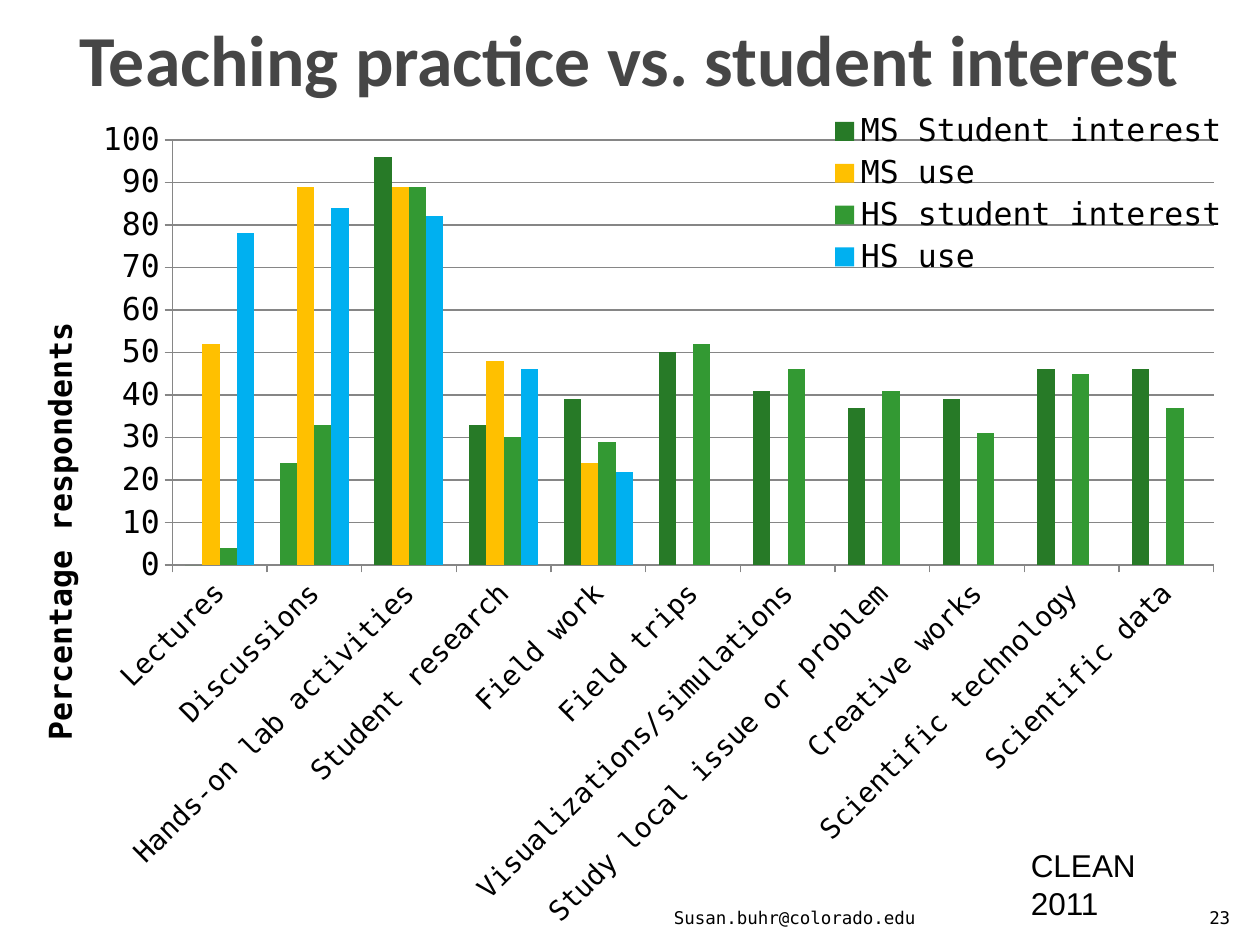
from lxml import etree
from pptx import Presentation
from pptx.chart.data import CategoryChartData
from pptx.dml.color import RGBColor
from pptx.enum.chart import XL_CHART_TYPE as ChartType, XL_LEGEND_POSITION as LegendPos, XL_TICK_MARK as Tick
from pptx.enum.text import MSO_ANCHOR as Anchor, PP_ALIGN as Align
from pptx.oxml.ns import qn
from pptx.util import Cm, Pt

BLACK = RGBColor(0x00, 0x00, 0x00)
TITLE_GREY = RGBColor(0x46, 0x46, 0x46)
GRID_GREY = RGBColor(0x86, 0x86, 0x86)
DARK_GREEN = RGBColor(0x27, 0x7A, 0x27)
GREEN = RGBColor(0x33, 0x99, 0x33)
AMBER = RGBColor(0xFF, 0xC0, 0x00)
BLUE = RGBColor(0x00, 0xB0, 0xF0)
MONO = "DejaVu Sans Mono"

CATEGORIES = [
    "Lectures", "Discussions", "Hands-on lab activities", "Student research",
    "Field work", "Field trips", "Visualizations/simulations",
    "Study local issue or problem", "Creative works", "Scientific technology",
    "Scientific data",
]
UNUSED = [None] * 6
SERIES = [
    ("MS Student interest", DARK_GREEN, [0, 24, 96, 33, 39, 50, 41, 37, 39, 46, 46]),
    ("MS use", AMBER, [52, 89, 89, 48, 24] + UNUSED),
    ("HS student interest", GREEN, [4, 33, 89, 30, 29, 52, 46, 41, 31, 45, 37]),
    ("HS use", BLUE, [78, 84, 82, 46, 22] + UNUSED),
]


def add_text(s, box, text, size=10, font=MONO, color=BLACK, bold=False,
             align=Align.LEFT, anchor=Anchor.TOP):
    tf = s.shapes.add_textbox(*map(Cm, box)).text_frame
    tf.word_wrap = True
    tf.vertical_anchor = anchor
    p = tf.paragraphs[0]
    p.alignment = align
    r = p.add_run()
    r.text = text
    r.font.size, r.font.name, r.font.bold = Pt(size), font, bold
    r.font.color.rgb = color


def set_font(font, size, bold=False):
    font.size, font.name, font.bold = Pt(size), MONO, bold
    font.color.rgb = BLACK


def set_layout(parent, index, **values):
    old = parent.find(qn("c:layout"))
    if old is not None:
        parent.remove(old)
    layout = etree.Element(qn("c:layout"))
    manual = etree.SubElement(layout, qn("c:manualLayout"))
    for tag, value in values.items():
        etree.SubElement(manual, qn(f"c:{tag}")).set("val", str(value))
    parent.insert(index, layout)


def style_axis(axis, size):
    axis.major_tick_mark, axis.minor_tick_mark = Tick.OUTSIDE, Tick.NONE
    axis.format.line.color.rgb = GRID_GREY
    set_font(axis.tick_labels.font, size)


def add_interest_chart(s, box):
    data = CategoryChartData(number_format="General")
    data.categories = CATEGORIES
    for name, _, values in SERIES:
        data.add_series(name, values)
    chart = s.shapes.add_chart(ChartType.COLUMN_CLUSTERED, *map(Cm, box), data).chart
    set_font(chart.font, 18)
    chart.has_title = False

    plot = chart.plots[0]
    plot.gap_width, plot.overlap, plot.vary_by_categories = 150, 0, False
    for series, (_, color, _) in zip(plot.series, SERIES):
        series.format.fill.solid()
        series.format.fill.fore_color.rgb = color
        series.invert_if_negative = False
    discussions = plot.series[0].points[1].format.fill
    discussions.solid()
    discussions.fore_color.rgb = GREEN

    cat_axis, val_axis = chart.category_axis, chart.value_axis
    style_axis(cat_axis, 16)
    cat_axis.tick_labels.font._element.getroottree()
    cat_axis._element.find(qn("c:txPr")).find(qn("a:bodyPr")).set("rot", "-2700000")
    style_axis(val_axis, 18)
    val_axis.minimum_scale, val_axis.maximum_scale, val_axis.major_unit = 0, 100, 10
    val_axis.has_major_gridlines = True
    val_axis.major_gridlines.format.line.color.rgb = GRID_GREY
    tf = val_axis.axis_title.text_frame
    tf.text = "Percentage respondents"
    tf._txBody.find(qn("a:bodyPr")).set("rot", "-5400000")
    set_font(tf.paragraphs[0].runs[0].font, 18, bold=True)

    chart.has_legend = True
    legend = chart.legend
    legend.position, legend.include_in_layout = LegendPos.CORNER, True
    set_font(legend.font, 18)

    set_layout(plot._element.getparent(), 0, layoutTarget="inner", xMode="edge",
               yMode="edge", x=0.139, y=0.042, w=0.841, h=0.506)
    set_layout(val_axis.axis_title._element, 1, xMode="edge", yMode="edge", x=0.027, y=0.253)
    set_layout(legend._element, 1, xMode="edge", yMode="edge", x=0.675, y=0.004, w=0.32, h=0.205)


def add_footer(s, left, top):
    add_text(s, (left, top, 6.53, 1.02), "Susan.buhr@colorado.edu",
             align=Align.RIGHT, anchor=Anchor.BOTTOM)
    add_text(s, (left + 8.36, top - 0.87, 4.01, 1.8), "CLEAN 2011", size=18, font="Arial")
    add_text(s, (left + 11.86, top, 1.02, 1.02), "23",
             align=Align.RIGHT, anchor=Anchor.BOTTOM)


def main():
    prs = Presentation()
    prs.slide_width, prs.slide_height = Cm(25.4), Cm(19.05)
    s = prs.slides.add_slide(prs.slide_layouts[6])
    add_text(s, (1.27, -0.43, 22.86, 3.18), "Teaching practice vs. student interest",
             size=41, font="Calibri", color=TITLE_GREY, bold=True,
             align=Align.CENTER, anchor=Anchor.MIDDLE)
    add_interest_chart(s, (0, 2.11, 24.97, 16.94))
    add_footer(s, 12.17, 17.81)
    prs.save("out.pptx")


if __name__ == "__main__":
    main()
